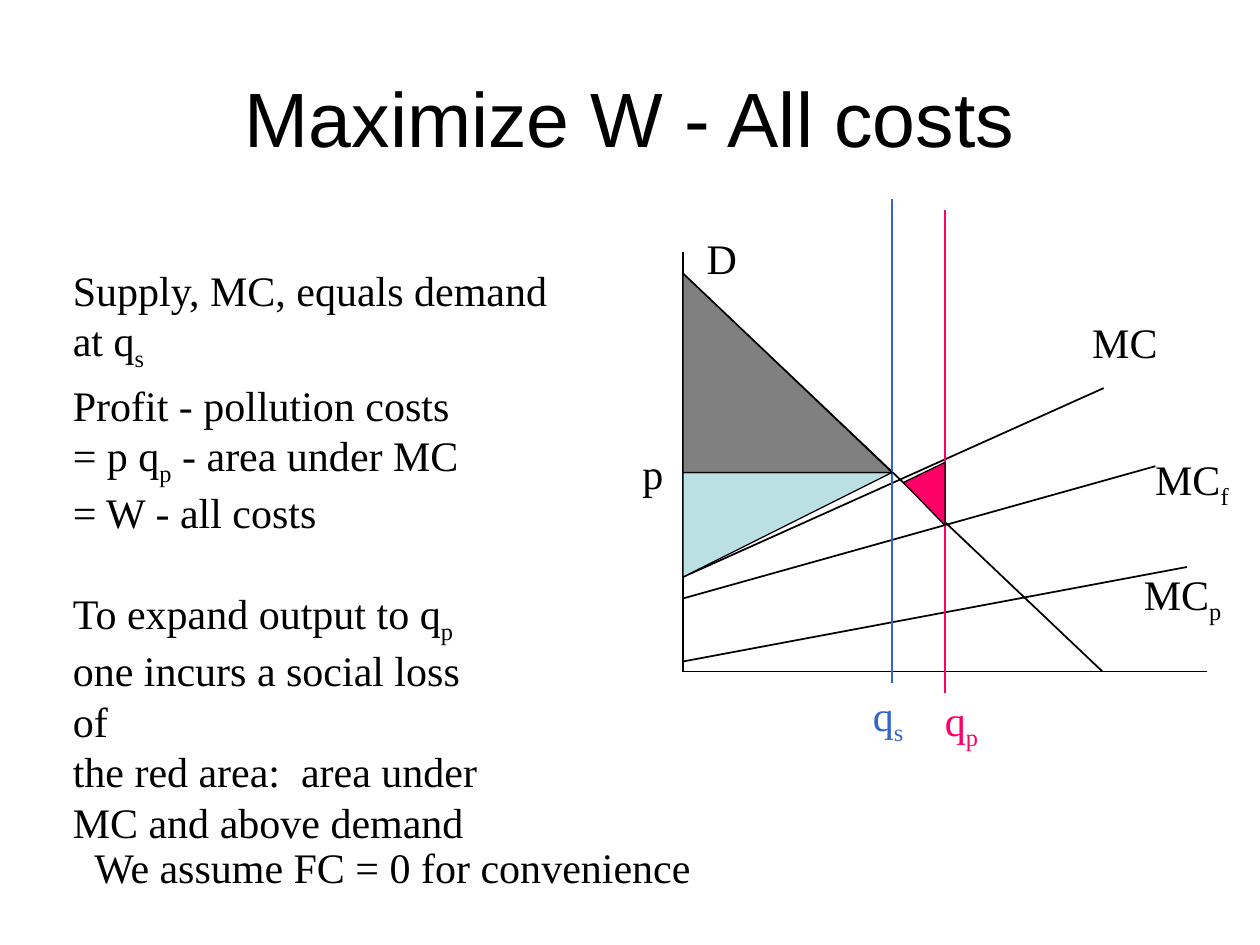
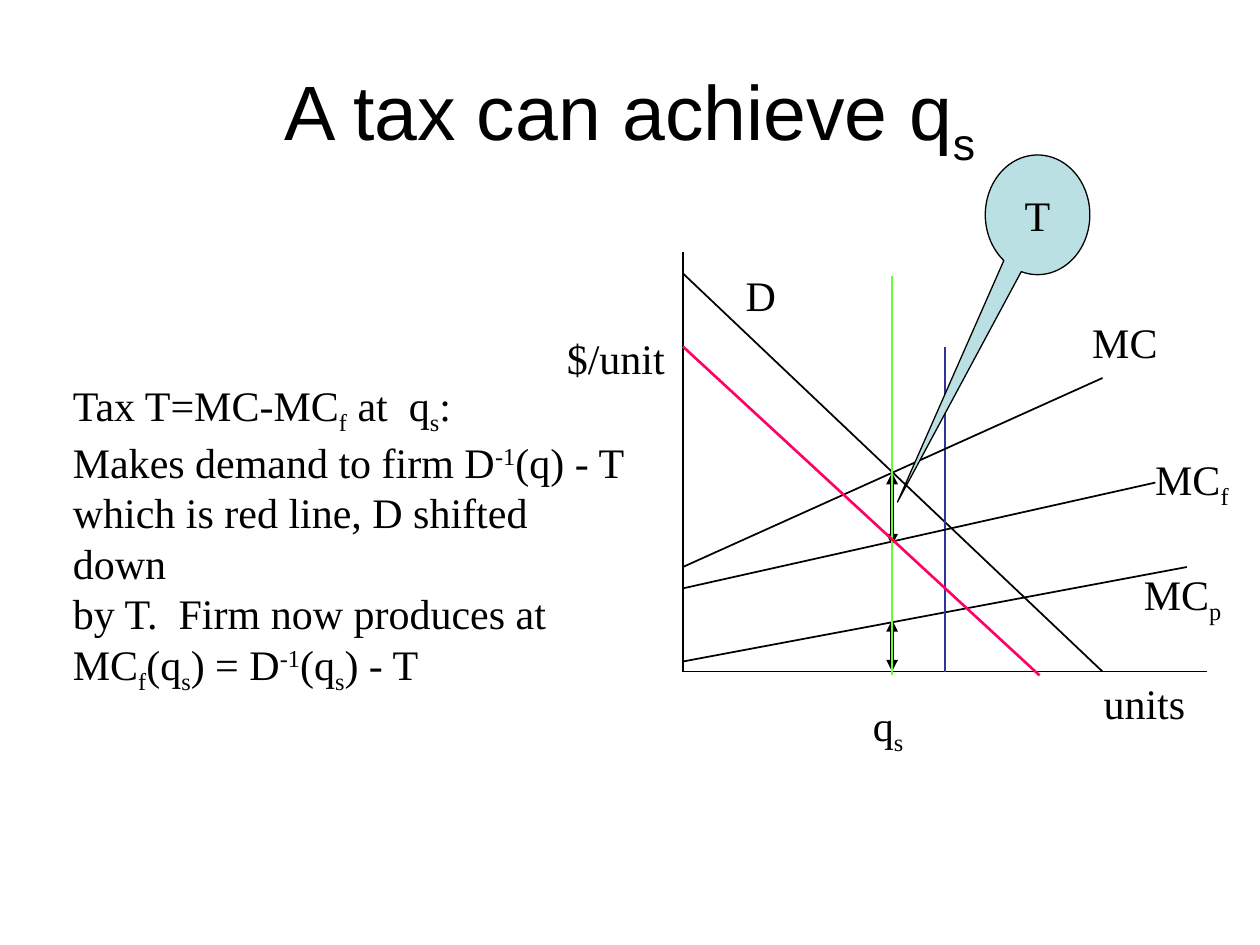
import pptx
import pptx.util
import pptx.dml.color
import pptx.enum.shapes
import pptx.enum.text
import pptx.oxml
import pptx.oxml.ns

Inches, Pt = pptx.util.Inches, pptx.util.Pt
SHAPE = pptx.enum.shapes.MSO_SHAPE
ALIGN = pptx.enum.text.PP_ALIGN

BLACK, GREY, AQUA = "000000", "808080", "BBE0E3"
BLUE, NAVY, RED, GREEN = "3366CC", "333399", "FF0066", "66FF33"
SERIF, SANS = "Times New Roman", "Arial"
BODY, HEAD = 24, 44

# Graph positions in inches
LEFT, BASE = 5.42, 5.33      # origin of the graph
TOP = 2.17                   # demand at zero output
QS, QP = 7.08, 7.5           # social and private output
PRICE = 3.75                 # demand at QS

# Lines: start, end, colour, width
AXES = [
    ((LEFT, 2), (LEFT, BASE), BLACK, 1),
    ((LEFT, BASE), (9.58, BASE), BLACK, 1),
]
CURVES = [
    ((LEFT, 5.25), (9.42, 4.5), BLACK, 1),
    ((LEFT, TOP), (8.75, BASE), BLACK, 1),
    ((QP, BASE), (QP, 2.75), NAVY, 1),
]

# Labels: text, left, top, width, colour. In all text, "|_" starts a
# subscript, "|^" a superscript, and the next "|" ends it.
LABELS = [
    ("MC|_f", 9.07, 3.55, 0.8, BLACK),
    ("MC|_p", 8.98, 4.46, 0.83, BLACK),
    ("MC", 8.57, 2.46, 0.72, BLACK),
]

COSTS = {
    "title": "Maximize W - All costs",
    "lines": [
        ((LEFT, 4.75), (9.17, 3.7), BLACK, 1),
        ((LEFT, 4.58), (8.76, 3.08), BLACK, 1),
        ((QS, 1.58), (QS, 5.42), BLUE, 0.75),
        ((QP, 1.67), (QP, 5.5), RED, 0.75),
    ],
    "labels": [
        ("q|_s", 6.83, 5.42, 0.73, BLUE),
        ("q|_p", 7.4, 5.46, 0.48, RED),
        ("p", 5, 3.5, 0.37, BLACK),
        ("D", 5.51, 1.8, 0.44, BLACK),
        ("We assume FC = 0 for convenience", 0.65, 6.63, 4.96, BLACK),
    ],
    # Text blocks: top, width, height, paragraphs
    "blocks": [
        (2.05, 3.99, 0.9, ["Supply, MC, equals demand", "at q|_s"]),
        (2.96, 3.63, 3.3, [
            "Profit - pollution costs",
            "= p q|_p| - area under MC",
            "= W - all costs",
            "To expand output to q|_p",
            "one incurs a social loss of",
            "the red area:  area under",
            "MC and above demand",
        ]),
    ],
}
GAP_AT, GAP = "To expand", 28.8   # paragraph set apart, points above it

TAX = {
    "title": "A tax can achieve q|_s",
    "lines": [
        ((LEFT, 4.67), (9.17, 3.83), BLACK, 1),
        ((LEFT, 4.5), (8.75, 3), BLACK, 1),
    ],
    "labels": [
        ("q|_s", 6.83, 5.5, 0.45, BLACK),
        ("D", 5.82, 2.09, 0.44, BLACK),
        ("$/unit", 4.4, 2.59, 0.98, BLACK),
        ("units", 8.66, BASE, 0.85, BLACK),
    ],
    "blocks": [
        (2.96, 4.63, 2.1, [
            "Tax T=MC-MC|_f| at  q|_s|:",
            "Makes demand to firm D|^-1|(q) - T",
            "which is red line, D shifted down",
            "by T.  Firm now produces at",
            "MC|_f|(q|_s|) = D|^-1|(q|_s|) - T",
        ]),
    ],
}
SPANS = [(PRICE, 4.33), (4.92, BASE)]   # equal heights of the tax at QS
SHIFT = [
    ((QS, 2.19), (QS, 5.36), GREEN, 1),
    ((LEFT, 2.75), (8.25, 5.36), RED, 1.5),
]


def rgb(code):
    return pptx.dml.color.RGBColor.from_string(code)


def write(para, text, color=BLACK, font=SERIF, size=BODY):
    """Fill a paragraph, raising or lowering the marked parts."""
    for part in text.split("|"):
        base = {"_": "-25000", "^": "30000"}.get(part[0])
        run = para.add_run()
        run.text = part[1:] if base else part
        run.font.name, run.font.size = font, Pt(size)
        run.font.color.rgb = rgb(color)
        if base:
            run._r.get_or_add_rPr().set("baseline", base)


def add_text(slide, box, paras, color=BLACK):
    frame = slide.shapes.add_textbox(*map(Inches, box)).text_frame
    frame.word_wrap = False
    frame.auto_size = pptx.enum.text.MSO_AUTO_SIZE.SHAPE_TO_FIT_TEXT
    for i, text in enumerate(paras):
        para = frame.add_paragraph() if i else frame.paragraphs[0]
        write(para, text, color)
        if text.startswith(GAP_AT):
            para.space_before = Pt(GAP)


def add_line(slide, start, end, color, width, arrows=False):
    line = slide.shapes.add_connector(
        pptx.enum.shapes.MSO_CONNECTOR.STRAIGHT,
        *map(Inches, start + end))
    line.line.color.rgb = rgb(color)
    line.line.width = Pt(width)
    props = line._element.spPr
    qn = pptx.oxml.ns.qn
    if arrows:
        stroke = line.line._get_or_add_ln()
        for tag in ("a:headEnd", "a:tailEnd"):
            stroke.append(stroke.makeelement(qn(tag), {"type": "triangle"}))
    props.append(props.makeelement(qn("a:effectLst"), {}))


def paint(shape, fill):
    shape.shadow.inherit = False
    shape.fill.solid()
    shape.fill.fore_color.rgb = rgb(fill)
    shape.line.color.rgb = rgb(BLACK)
    shape.line.width = Pt(0.75)
    return shape


def add_shape(slide, kind, box, fill):
    return paint(slide.shapes.add_shape(kind, *map(Inches, box)), fill)


def add_graph(deck, data):
    """Add a slide with its title, text and the shared cost graph."""
    slide = deck.slides.add_slide(deck.slide_layouts[5])
    title = slide.shapes.title
    title.left, title.top, title.width, title.height = map(
        Inches, (0.5, 0.3, 9, 1.25))
    title.text_frame.vertical_anchor = pptx.enum.text.MSO_ANCHOR.MIDDLE
    para = title.text_frame.paragraphs[0]
    para.alignment = ALIGN.CENTER
    write(para, data["title"], font=SANS, size=HEAD)
    for line in AXES + CURVES + data["lines"]:
        add_line(slide, *line)
    for text, left, top, width, color in LABELS + data["labels"]:
        add_text(slide, (left, top, width, 0.5), [text], color)
    for top, width, height, paras in data["blocks"]:
        add_text(slide, (0.48, top, width, height), paras)
    return slide


def add_areas(slide):
    """Shade consumer surplus, net profit and social loss."""
    wide, deep = QS - LEFT, 0.83
    turned = add_shape(
        slide, SHAPE.RIGHT_TRIANGLE,
        (LEFT + (wide - deep) / 2, PRICE + (deep - wide) / 2, deep, wide),
        AQUA)
    turned.rotation = 90
    add_shape(slide, SHAPE.RIGHT_TRIANGLE,
              (LEFT, TOP, wide, PRICE - TOP), GREY)
    loss = slide.shapes.build_freeform(
        Inches(QP), Inches(3.67))
    loss.add_line_segments(
        [(Inches(7.17), Inches(3.83)), (Inches(QP), Inches(4.17))])
    paint(loss.convert_to_shape(), RED)


def add_tax(slide):
    """Mark the tax at QS, the shifted demand and the callout."""
    for top, low in SPANS:
        add_line(slide, (QS, top), (QS, low), BLACK, 2.25, arrows=True)
    for line in SHIFT:
        add_line(slide, *line)
    call = add_shape(slide, SHAPE.OVAL_CALLOUT, (7.82, 1.23, 0.83, 0.95), AQUA)
    call.adjustments[0], call.adjustments[1] = -1.34, 2.4
    frame = call.text_frame
    frame.word_wrap = False
    frame.vertical_anchor = pptx.enum.text.MSO_ANCHOR.MIDDLE
    frame.paragraphs[0].alignment = ALIGN.CENTER
    write(frame.paragraphs[0], "T")


def main():
    deck = pptx.Presentation()
    deck.slide_width, deck.slide_height = Inches(10), Inches(7.5)
    add_areas(add_graph(deck, COSTS))
    add_tax(add_graph(deck, TAX))
    deck.save("out.pptx")


if __name__ == "__main__":
    main()
